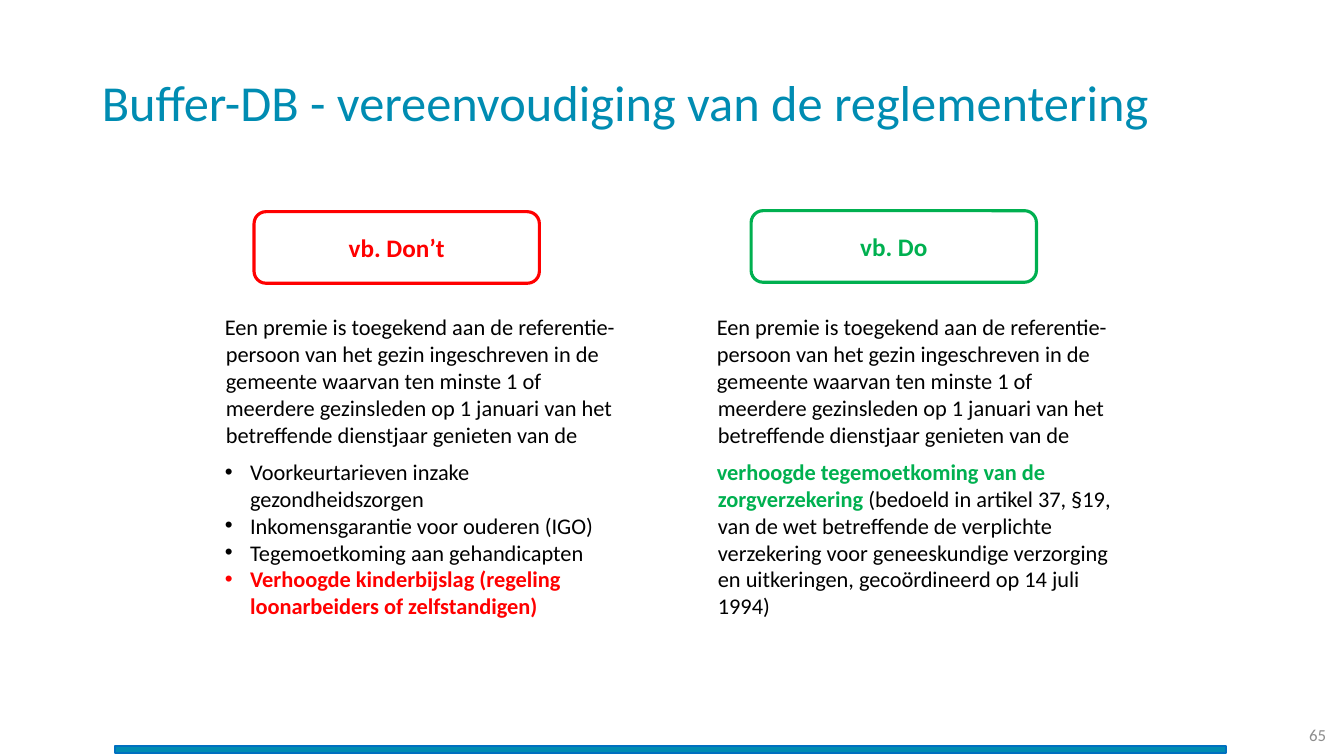
from dataclasses import dataclass

from lxml import etree
from pptx import Presentation
from pptx import util as u
from pptx.dml.color import RGBColor
from pptx.enum import shapes, text
from pptx.oxml.ns import qn

PX = 9144  # EMU per px, 100 px to the inch
FONT = "Calibri"
TEAL = RGBColor(0x00, 0x8C, 0xB2)
BLUE = RGBColor(0x00, 0x70, 0xC0)
RED = RGBColor(0xFF, 0x00, 0x00)
GREEN = RGBColor(0x00, 0xB0, 0x50)
BLACK = RGBColor(0x00, 0x00, 0x00)
WHITE = RGBColor(0xFF, 0xFF, 0xFF)
GREY = RGBColor(0x8C, 0x8C, 0x8C)


@dataclass
class Box:
    left: int
    top: int
    width: int
    height: int

    def emu(self) -> list[int]:
        return [n * PX for n in (self.left, self.top, self.width, self.height)]


@dataclass
class Run:
    words: str
    color: RGBColor = BLACK
    bold: bool = False


@dataclass
class Para:
    runs: list[Run]
    bullet: bool = False
    gap: float = 0


@dataclass
class Column:
    label: str
    color: RGBColor
    badge: Box
    body: Box
    paras: list[Para]


COLUMNS = [
    Column("vb. Don’t", RED, Box(252, 210, 283, 71), Box(194, 306, 433, 316), [
        Para([Run("Een premie is toegekend aan de referentie- persoon van het gezin "
                  "ingeschreven in de gemeente waarvan ten minste 1 of meerdere "
                  "gezinsleden op 1 januari van het betreffende dienstjaar "
                  "genieten van de")]),
        Para([Run("Voorkeurtarieven inzake\ngezondheidszorgen")], True, 7.3),
        Para([Run("Inkomensgarantie voor ouderen (IGO)")], True),
        Para([Run("Tegemoetkoming aan gehandicapten")], True),
        Para([Run("Verhoogde kinderbijslag (regeling\nloonarbeiders of zelfstandigen)",
                  RED, True)], True),
    ]),
    Column("vb. Do", GREEN, Box(745, 209, 283, 71), Box(682, 306, 445, 316), [
        Para([Run("Een premie is toegekend aan de referentie-")]),
        Para([Run("persoon van het gezin ingeschreven in de")]),
        Para([Run("gemeente waarvan ten minste 1 of meerdere gezinsleden op 1 januari "
                  "van het betreffende dienstjaar genieten van de")]),
        Para([Run("verhoogde tegemoetkoming van de zorgverzekering ", GREEN, True),
              Run("(bedoeld in artikel 37, §19, van de wet betreffende de verplichte "
                  "verzekering voor geneeskundige verzorging en uitkeringen, "
                  "gecoördineerd op 14 juli 1994)")], gap=7.3),
    ]),
]


def place(shape, box: Box) -> None:
    shape.left, shape.top, shape.width, shape.height = box.emu()


def add_run(para, run: Run, size: float) -> None:
    """Add the run, with a line break at each newline."""
    for i, line in enumerate(run.words.split("\n")):
        if i:
            para.add_line_break()
        part = para.add_run()
        part.text = line
        font = part.font
        font.name, font.size, font.bold = FONT, u.Pt(size), run.bold
        font.color.rgb = run.color


def set_list(para, bullet: bool) -> None:
    """Set the hanging indent and the bullet, if any."""
    props = para._p.get_or_add_pPr()
    left, hang = (44, 25) if bullet else (20, 1)
    props.set("marL", str(left * PX))
    props.set("indent", str(-hang * PX))
    if bullet:
        etree.SubElement(props, qn("a:buFont")).set("typeface", "Arial")
        etree.SubElement(props, qn("a:buChar")).set("char", "•")
    else:
        etree.SubElement(props, qn("a:buNone"))


def fill_body(body, col: Column) -> None:
    place(body, col.body)
    frame = body.text_frame
    frame.word_wrap = True
    frame.auto_size = text.MSO_AUTO_SIZE.NONE
    frame.vertical_anchor = text.MSO_ANCHOR.TOP
    for i, item in enumerate(col.paras):
        para = frame.add_paragraph() if i else frame.paragraphs[0]
        para.line_spacing = 1.0
        para.space_before = u.Pt(item.gap)
        set_list(para, item.bullet)
        for run in item.runs:
            add_run(para, run, 16)


def add_box(slide, kind, box: Box, fill: RGBColor, line: RGBColor, width: float):
    shape = slide.shapes.add_shape(kind, *box.emu())
    shape.shadow.inherit = False
    shape.fill.solid()
    shape.fill.fore_color.rgb = fill
    shape.line.color.rgb = line
    shape.line.width = u.Pt(width)
    return shape


def add_badge(slide, col: Column) -> None:
    badge = add_box(slide, shapes.MSO_SHAPE.ROUNDED_RECTANGLE, col.badge,
                    WHITE, col.color, 2.25)
    badge.text_frame.vertical_anchor = text.MSO_ANCHOR.MIDDLE
    para = badge.text_frame.paragraphs[0]
    para.alignment = text.PP_ALIGN.CENTER
    add_run(para, Run(col.label, col.color, True), 18)


def set_title(title) -> None:
    place(title, Box(91, 32, 1150, 145))
    title.text_frame.vertical_anchor = text.MSO_ANCHOR.MIDDLE
    title.text_frame.auto_size = text.MSO_AUTO_SIZE.NONE
    para = title.text_frame.paragraphs[0]
    para.alignment = text.PP_ALIGN.LEFT
    para.line_spacing = 0.9
    add_run(para, Run("Buffer-DB - vereenvoudiging van de reglementering", TEAL), 36)


def add_footer(slide) -> None:
    add_box(slide, shapes.MSO_SHAPE.RECTANGLE, Box(114, 740, 1102, 7), TEAL, BLUE, 1)
    number = slide.shapes.add_textbox(*Box(1243, 709, 82, 40).emu())
    number.text_frame.word_wrap = True
    number.text_frame.vertical_anchor = text.MSO_ANCHOR.MIDDLE
    para = number.text_frame.paragraphs[0]
    para.alignment = text.PP_ALIGN.RIGHT
    add_run(para, Run("65", GREY), 12)


def main() -> None:
    prs = Presentation()
    prs.slide_width, prs.slide_height = 1333 * PX, 750 * PX
    slide = prs.slides.add_slide(prs.slide_layouts.get_by_name("Two Content"))
    set_title(slide.shapes.title)
    add_footer(slide)
    for i, col in enumerate(COLUMNS, start=1):
        fill_body(slide.placeholders[i], col)
        add_badge(slide, col)
    prs.save("out.pptx")


if __name__ == "__main__":
    main()
